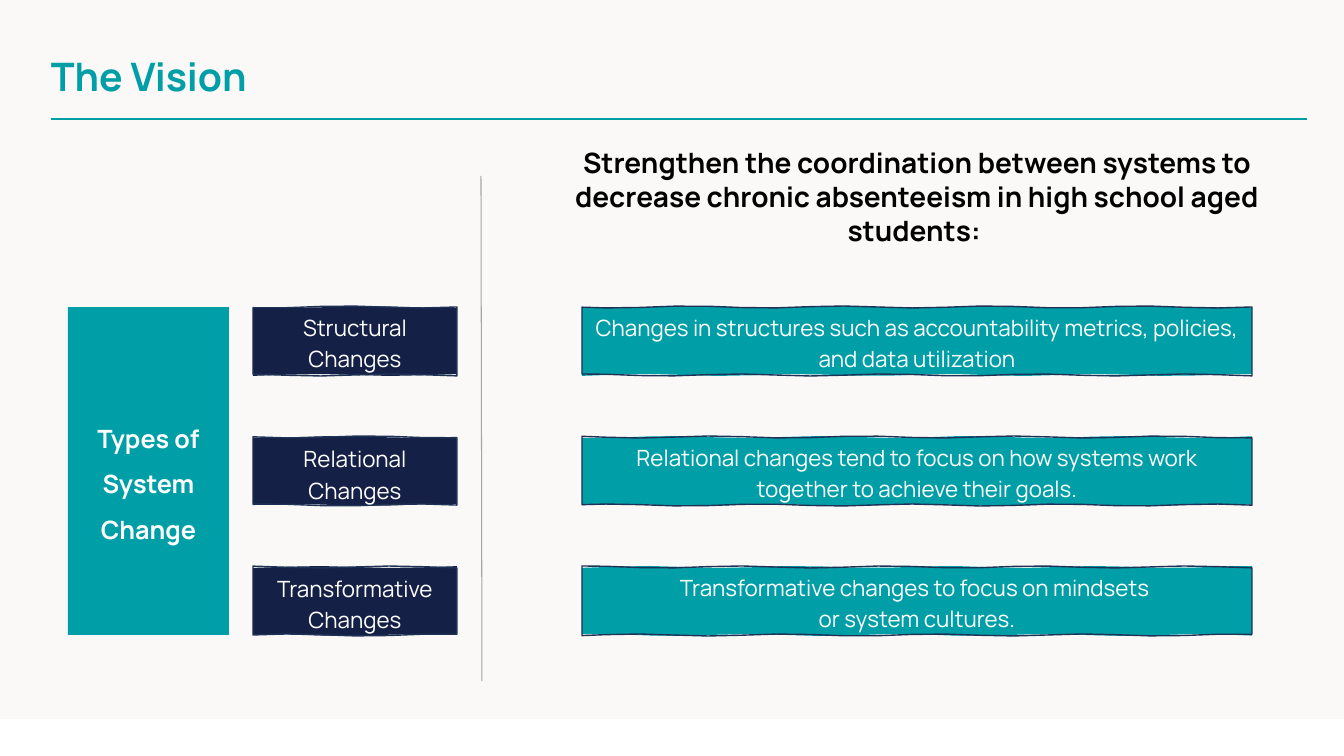
"""Builds the slide "The Vision" with its three types of system change."""
from copy import deepcopy
from math import pi, sin

from lxml import etree
from pptx import Presentation
from pptx.dml.color import RGBColor
from pptx.enum.shapes import MSO_CONNECTOR, MSO_SHAPE
from pptx.enum.text import MSO_ANCHOR, PP_ALIGN
from pptx.oxml.ns import qn
from pptx.util import Pt

RECTANGLE, STRAIGHT = MSO_SHAPE.RECTANGLE, MSO_CONNECTOR.STRAIGHT
MIDDLE, TOP = MSO_ANCHOR.MIDDLE, MSO_ANCHOR.TOP
LEFT, CENTER = PP_ALIGN.LEFT, PP_ALIGN.CENTER
FONT = "Manrope"
PX = 914400 / 100.8
COLORS = {
    "sand": "E6E4DD", "teal": "009EA7", "navy": "152047", "ink": "1E3256",
    "gray": "A5A5A5", "white": "FFFFFF", "black": "000000",
}


def px(*lengths):
    return [round(length * PX) for length in lengths]


def write(shape, spans, color, bold=False, align=CENTER, anchor=MIDDLE, spacing=1.0, after=0):
    frame = shape.text_frame
    frame.word_wrap = True
    frame.vertical_anchor = anchor
    para = frame.paragraphs[0]
    para.alignment = align
    para.line_spacing = spacing
    para.space_after = Pt(after)
    for text, size in spans:
        if text == "\n":
            para.add_line_break()
            continue
        span = para.add_run()
        span.text = text
        span.font.name = FONT
        span.font.size = Pt(size)
        span.font.bold = bold
        span.font.color.rgb = RGBColor.from_string(COLORS[color])


deck = Presentation()
deck.slide_width, deck.slide_height = px(1344, 756)
page = deck.slides.add_slide(deck.slide_layouts[6])

backdrop = page.shapes.add_shape(RECTANGLE, *px(0, 0, 1344, 719))
backdrop.shadow.inherit = False
backdrop.fill.solid()
backdrop.fill.fore_color.rgb = RGBColor.from_string(COLORS["sand"])
backdrop.line.fill.background()
backdrop_color = backdrop._element.spPr.find(".//" + qn("a:srgbClr"))
etree.SubElement(backdrop_color, qn("a:alpha")).set("val", "20000")

for ends, color, width in [
    ((51, 119, 1307, 119), "teal", 1.5),
    ((482, 681, 481, 176), "gray", 0.75),
]:
    rule = page.shapes.add_connector(STRAIGHT, *px(*ends))
    rule.line.color.rgb = RGBColor.from_string(COLORS[color])
    rule.line.width = Pt(width)
    etree.SubElement(rule._element.spPr, qn("a:effectLst"))

title = page.shapes.add_textbox(*px(41, 6, 1159, 146))
write(title, [("The Vision", 28)], "teal", bold=True, align=LEFT, spacing=0.9)

types_group = page.shapes.add_group_shape()
types_panel = types_group.shapes.add_shape(RECTANGLE, *px(68, 307, 161, 328))
types_label = types_group.shapes.add_shape(RECTANGLE, *px(76, 408, 145, 93))
for shape in (types_panel, types_label):
    shape.shadow.inherit = False
    shape.fill.solid()
    shape.fill.fore_color.rgb = RGBColor.from_string(COLORS["teal"])
    shape.line.fill.background()
label_frame = types_label.text_frame
label_frame.margin_left = label_frame.margin_right = 0
label_frame.margin_top = label_frame.margin_bottom = 0
write(types_label, [("Types of System Change", 18)], "white", bold=True, anchor=TOP, spacing=1.5)

heading = page.shapes.add_textbox(*px(525, 141, 784, 112))
heading_text = (
    "Strengthen the coordination between systems to decrease chronic "
    "absenteeism in high school aged students: "
)
write(heading, [(heading_text, 20)], "black", bold=True, anchor=TOP)

COLUMNS = [(253, 204, "navy"), (582, 670, "teal")]
ROW_TOP, ROW_STEP, ROW_HEIGHT = 307, 130, 68
WAVE_STEP, WAVE_LENGTH, WAVE_HEIGHT = 34, 150, 1
ROWS = [
    (
        [("Structural Changes", 16)],
        [("Changes in structures such as accountability metrics, policies, and data utilization", 16)],
    ),
    (
        [("Relational", 16), (" ", 18), ("Changes", 16)],
        [("Relational changes tend to focus on how systems work together to achieve their goals.", 16)],
    ),
    (
        [("Transformative", 16), (" ", 17), ("Changes", 16)],
        [("Transformative changes to focus on mindsets ", 16), ("\n", 16), ("or system cultures.", 16)],
    ),
]

for row, texts in enumerate(ROWS):
    top = ROW_TOP + row * ROW_STEP
    for (left, width, color), spans in zip(COLUMNS, texts):
        steps = [*range(0, width, WAVE_STEP), width]
        upper = [
            (left + x, top + WAVE_HEIGHT * sin(2 * pi * x / WAVE_LENGTH + row)) for x in steps
        ]
        lower = [
            (left + x, top + ROW_HEIGHT + WAVE_HEIGHT * sin(2 * pi * x / WAVE_LENGTH + row + 2))
            for x in reversed(steps)
        ]
        points = [px(*point) for point in upper + lower]
        builder = page.shapes.build_freeform(*points[0])
        builder.add_line_segments(points[1:], close=True)
        box = builder.convert_to_shape()
        box.shadow.inherit = False
        box.fill.solid()
        box.fill.fore_color.rgb = RGBColor.from_string(COLORS[color])
        box.line.color.rgb = RGBColor.from_string(COLORS["ink"])
        box.line.width = Pt(1)

        fill_path = box._element.spPr.find(".//" + qn("a:path"))
        outline_path = deepcopy(fill_path)
        fill_path.set("stroke", "0")
        outline_path.set("fill", "none")
        for point in outline_path.iter(qn("a:pt")):
            point.set("x", str(box.width - int(point.get("x"))))
        fill_path.addnext(outline_path)
        write(box, spans, "white", spacing=1.16, after=8)

deck.save("out.pptx")
